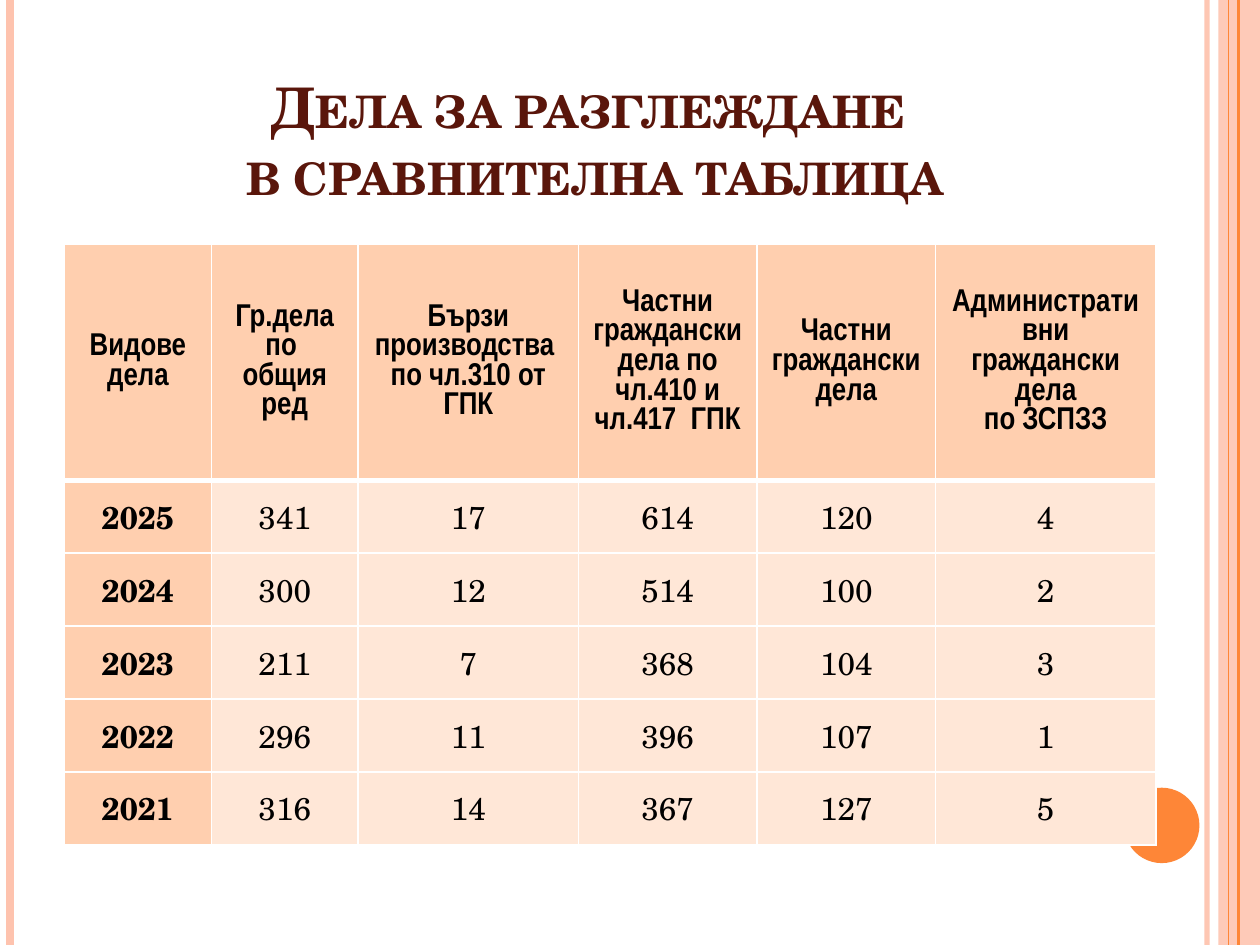
"""Builds a slide comparing the civil cases heard in each year by type."""
from lxml import etree
from pptx import Presentation
from pptx import util as u
from pptx.dml import color
from pptx.enum import shapes, text
from pptx.oxml import ns

TITLE = "Дела за разглеждане \vв сравнителна таблица"
HEADERS = [
    "Видове дела",
    "Гр.дела по \nобщия ред",
    "Бързи производства \nпо чл.310 от\nГПК",
    "Частни граждански дела по\nчл.410 и\nчл.417  ГПК",
    "Частни граждански дела",
    "Административни граждански дела\nпо ЗСПЗЗ",
]
CASES = [
    (2025, 341, 17, 614, 120, 4),
    (2024, 300, 12, 514, 100, 2),
    (2023, 211, 7, 368, 104, 3),
    (2022, 296, 11, 396, 107, 1),
    (2021, 316, 14, 367, 127, 5),
]
COLUMN_WIDTHS = [2.96, 2.96, 4.44, 3.6, 3.6, 4.44]
HEADER_HEIGHT, ROW_HEIGHT = 4.75, 1.47
SLIDE_WIDTH, SLIDE_HEIGHT = 25.4, 19.05

THEME = {
    "serif": "TeX Gyre Schola", "narrow": "Arial Narrow",
    "title_size": 32, "table_size": 18,
    "title": "5A160B", "text": "000000", "accent": "FE8637", "pale": "FEC3AE",
    "heading_fill": "FFCFAF", "value_fill": "FFE7D7", "border": "FFFFFF",
}
STRIPES = [
    (24.33, "pale", 3, 93),
    (0.2, "pale", 4.5, 100),
    (24.97, "accent", 1.5, 100),
    (24.77, "accent", 0.75, 100),
]
BAND = (24.56, 0, 0.84, SLIDE_HEIGHT)
DISC = (22.66, 15.88, 1.52, 1.52)


def rgb(name):
    return color.RGBColor.from_string(THEME[name])


def lengths(values):
    return [u.Cm(value) for value in values]


def set_alpha(shape, percent):
    for solid in shape._element.spPr.iter(ns.qn("a:srgbClr")):
        etree.SubElement(solid, ns.qn("a:alpha")).set("val", str(percent * 1000))


def add_stripe(slide, x, color_name, width, opacity):
    ends = lengths((x, 0, x, SLIDE_HEIGHT))
    stripe = slide.shapes.add_connector(shapes.MSO_CONNECTOR.STRAIGHT, *ends)
    stripe.line.color.rgb = rgb(color_name)
    stripe.line.width = u.Pt(width)
    if opacity < 100:
        set_alpha(stripe, opacity)
    etree.SubElement(stripe._element.spPr, ns.qn("a:effectLst"))


def add_plain_shape(slide, kind, box, color_name):
    shape = slide.shapes.add_shape(kind, *lengths(box))
    shape.shadow.inherit = False
    shape.fill.solid()
    shape.fill.fore_color.rgb = rgb(color_name)
    shape.line.fill.background()
    return shape


def style_paragraph(paragraph, face, size, color_name, bold):
    paragraph.alignment = text.PP_ALIGN.CENTER
    font = paragraph.font
    font.name, font.size, font.bold = THEME[face], u.Pt(THEME[size]), bold
    font.color.rgb = rgb(color_name)


def set_borders(cell, bottom_width):
    properties = cell._tc.get_or_add_tcPr()
    widths = {"lnL": 1, "lnR": 1, "lnT": 1, "lnB": bottom_width}
    for position, (side, width) in enumerate(widths.items()):
        border = etree.Element(ns.qn(f"a:{side}"), w=str(u.Pt(width)))
        fill = etree.SubElement(border, ns.qn("a:solidFill"))
        etree.SubElement(fill, ns.qn("a:srgbClr")).set("val", THEME["border"])
        properties.insert(position, border)


def fill_cell(cell, value, is_header, is_heading):
    cell.text = str(value)
    cell.vertical_anchor = text.MSO_ANCHOR.MIDDLE
    cell.margin_left = cell.margin_right = u.Cm(0.18)
    cell.margin_top = cell.margin_bottom = 0
    cell.fill.solid()
    cell.fill.fore_color.rgb = rgb("heading_fill" if is_heading else "value_fill")
    set_borders(cell, 3 if is_header else 1)
    face = "narrow" if is_header else "serif"
    for paragraph in cell.text_frame.paragraphs:
        style_paragraph(paragraph, face, "table_size", "text", is_heading)


def add_title(slide):
    title = slide.shapes.title
    title.left, title.top, title.width, title.height = lengths((0.89, 1.12, 22.2, 3.18))
    title.text_frame.text = TITLE
    title.text_frame.vertical_anchor = text.MSO_ANCHOR.BOTTOM
    paragraph = title.text_frame.paragraphs[0]
    style_paragraph(paragraph, "serif", "title_size", "title", True)
    paragraph._p.pPr.find(ns.qn("a:defRPr")).set("cap", "small")


def add_case_table(slide):
    rows = [HEADERS, *CASES]
    heights = [HEADER_HEIGHT] + [ROW_HEIGHT] * len(CASES)
    box = lengths((1.3, 4.93, sum(COLUMN_WIDTHS), sum(heights)))
    table = slide.shapes.add_table(len(rows), len(HEADERS), *box).table
    table.first_col = True
    for column, width in zip(table.columns, COLUMN_WIDTHS):
        column.width = u.Cm(width)
    for row_index, (values, height) in enumerate(zip(rows, heights)):
        table.rows[row_index].height = u.Cm(height)
        for column_index, value in enumerate(values):
            is_header = row_index == 0
            fill_cell(table.cell(row_index, column_index), value,
                      is_header, is_header or column_index == 0)


def main():
    presentation = Presentation()
    presentation.slide_width, presentation.slide_height = lengths((SLIDE_WIDTH, SLIDE_HEIGHT))
    slide = presentation.slides.add_slide(presentation.slide_layouts.get_by_name("Title Only"))
    band = add_plain_shape(slide, shapes.MSO_SHAPE.RECTANGLE, BAND, "pale")
    set_alpha(band, 87)
    for stripe in STRIPES:
        add_stripe(slide, *stripe)
    add_plain_shape(slide, shapes.MSO_SHAPE.OVAL, DISC, "accent")
    add_title(slide)
    add_case_table(slide)
    presentation.save("out.pptx")


if __name__ == "__main__":
    main()
